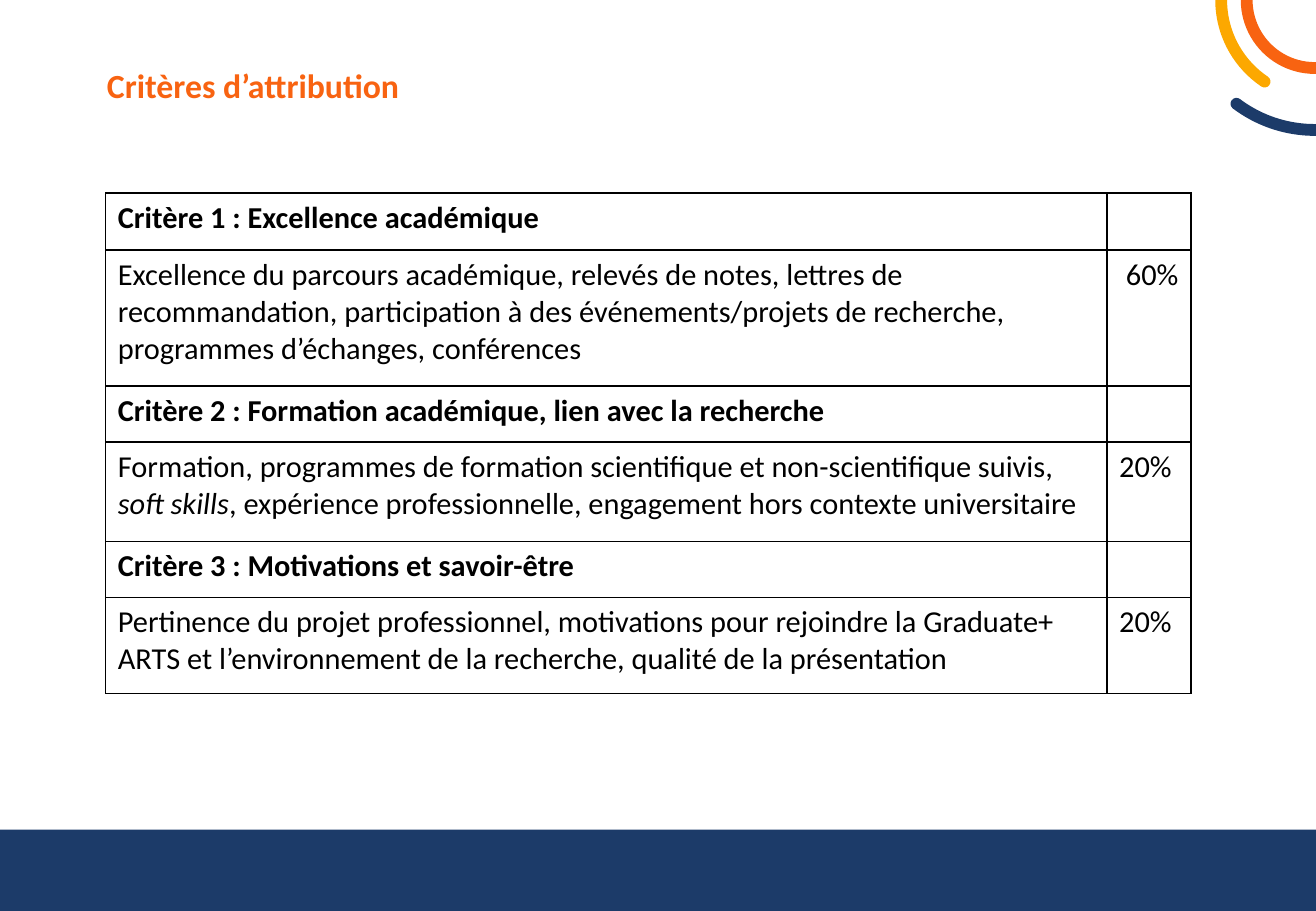
from lxml import etree
from pptx import Presentation
from pptx.dml.color import RGBColor
from pptx.enum.shapes import MSO_SHAPE
from pptx.enum.text import MSO_ANCHOR, MSO_AUTO_SIZE, PP_ALIGN
from pptx.oxml.ns import qn
from pptx.util import Inches, Pt

RECT, ARC = MSO_SHAPE.RECTANGLE, MSO_SHAPE.ARC
MIDDLE, LEFT, NO_FIT = MSO_ANCHOR.MIDDLE, PP_ALIGN.LEFT, MSO_AUTO_SIZE.NONE
TITLE_ONLY = 5

NAVY = RGBColor(0x1C, 0x3B, 0x69)
ORANGE = RGBColor(0xF8, 0x63, 0x11)
YELLOW = RGBColor(0xFC, 0xA8, 0x00)
BLACK = RGBColor(0, 0, 0)
WHITE = RGBColor(0xFF, 0xFF, 0xFF)
FONT = "Calibri"

WIDTH, HEIGHT = 10.83, 7.5
BAND = 0.67
COLS = [8.24, 0.69]
ROWS = [0.47, 1.12, 0.46, 0.82, 0.46, 0.79]

# Centre x, radius, start and end angle in degrees, colour
ARCS = [
    (10.82, 0.56, 75, 190, ORANGE),
    (10.82, 1.07, 80, 127, NAVY),
    (10.86, 0.81, 124, 190, YELLOW),
]

# Heading, text runs with an italic flag, weight
CRITERIA = [
    ("Critère 1 : Excellence académique",
     [("Excellence du parcours académique, relevés de notes, lettres de "
       "recommandation, participation à des événements/projets de recherche, "
       "programmes d’échanges, conférences", False)],
     " 60%"),
    ("Critère 2 : Formation académique, lien avec la recherche",
     [("Formation, programmes de formation scientifique et non-scientifique "
       "suivis, ", False),
      ("soft skills", True),
      (", expérience professionnelle, engagement hors contexte universitaire",
       False)],
     "20%"),
    ("Critère 3 : Motivations et savoir-être",
     [("Pertinence du projet professionnel, motivations pour rejoindre la "
       "Graduate+ ARTS et l’environnement de la recherche, qualité de la "
       "présentation", False)],
     "20%"),
]


def add_run(para, text, size, color=BLACK, bold=False, italic=False):
    run = para.add_run()
    run.text = text
    font = run.font
    font.name, font.size = FONT, Pt(size)
    font.bold, font.italic = bold, italic
    font.color.rgb = color


def add_band(slide):
    band = slide.shapes.add_shape(RECT, 0, Inches(HEIGHT - BAND),
                                  Inches(WIDTH), Inches(BAND))
    band.shadow.inherit = False
    band.fill.solid()
    band.fill.fore_color.rgb = NAVY
    band.line.fill.background()


def add_arc(slide, mid, radius, start, end, color):
    """Draw a round-capped arc centred on the top edge of the slide."""
    arc = slide.shapes.add_shape(ARC, Inches(mid - radius), Inches(-radius),
                                 Inches(2 * radius), Inches(2 * radius))
    arc.shadow.inherit = False
    # One unit of adjustment is 100000 sixty-thousandths of a degree
    arc.adjustments[0] = start * 0.6
    arc.adjustments[1] = end * 0.6
    arc.fill.background()
    arc.line.color.rgb = color
    arc.line.width = Pt(7)
    arc.line._get_or_add_ln().set("cap", "rnd")


def add_title(slide, text):
    title = slide.shapes.title
    title.left, title.top = Inches(0.78), Inches(0.48)
    title.width, title.height = Inches(8.67), Inches(0.44)
    frame = title.text_frame
    frame.auto_size = NO_FIT
    frame.word_wrap = True
    frame.vertical_anchor = MIDDLE
    para = frame.paragraphs[0]
    para.alignment = LEFT
    add_run(para, text, 20, ORANGE, bold=True)


def style_cell(cell):
    """Give the cell thin black borders and a white fill."""
    props = cell._tc.get_or_add_tcPr()
    for side in ("a:lnL", "a:lnR", "a:lnT", "a:lnB"):
        line = etree.SubElement(props, qn(side), w=str(Pt(1)))
        fill = etree.SubElement(line, qn("a:solidFill"))
        etree.SubElement(fill, qn("a:srgbClr"), val=str(BLACK))
    cell.fill.solid()
    cell.fill.fore_color.rgb = WHITE


def add_criteria(slide):
    frame = slide.shapes.add_table(len(ROWS), len(COLS), Inches(0.87),
                                   Inches(1.59), Inches(sum(COLS)),
                                   Inches(sum(ROWS)))
    table = frame.table
    table.first_row = table.horz_banding = False
    for col, width in zip(table.columns, COLS):
        col.width = Inches(width)
    for row, height in zip(table.rows, ROWS):
        row.height = Inches(height)
    for cell in table.iter_cells():
        style_cell(cell)

    def para(row, col):
        return table.cell(row, col).text_frame.paragraphs[0]

    for index, (heading, runs, weight) in enumerate(CRITERIA):
        row = 2 * index
        add_run(para(row, 0), heading, 18, bold=True)
        body = para(row + 1, 0)
        for text, italic in runs:
            add_run(body, text, 18, italic=italic)
        add_run(para(row + 1, 1), weight, 18)


def main():
    deck = Presentation()
    deck.slide_width, deck.slide_height = Inches(WIDTH), Inches(HEIGHT)
    slide = deck.slides.add_slide(deck.slide_layouts[TITLE_ONLY])
    add_band(slide)
    for arc in ARCS:
        add_arc(slide, *arc)
    add_title(slide, "Critères d’attribution")
    add_criteria(slide)
    deck.save("out.pptx")


if __name__ == "__main__":
    main()
